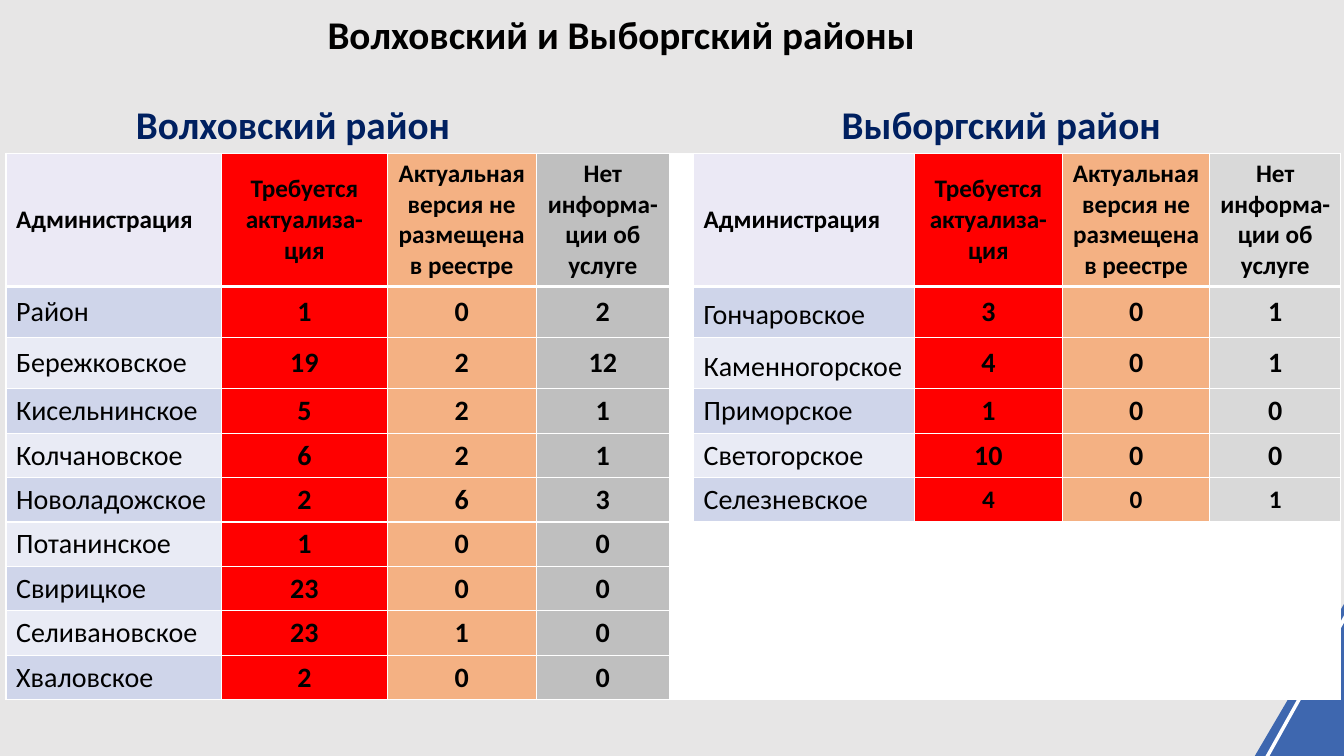
from lxml.etree import SubElement
from pptx import Presentation
from pptx.dml.color import RGBColor
from pptx.enum.text import MSO_ANCHOR, MSO_AUTO_SIZE, PP_ALIGN
from pptx.oxml.ns import qn
from pptx.util import Inches, Pt

FONT = "Calibri"
BLACK = RGBColor(0x00, 0x00, 0x00)
WHITE = RGBColor(0xFF, 0xFF, 0xFF)
NAVY = RGBColor(0x00, 0x20, 0x60)
BLUE = RGBColor(0x3E, 0x67, 0xAF)
BACKGROUND = RGBColor(0xE7, 0xE6, 0xE6)
LILAC = RGBColor(0xEB, 0xE9, 0xF5)
BANDS = (RGBColor(0xCF, 0xD5, 0xEA), RGBColor(0xE9, 0xEB, 0xF5))
RED = RGBColor(0xFF, 0x00, 0x00)
ORANGE = RGBColor(0xF4, 0xB1, 0x83)
GREY = RGBColor(0xBF, 0xBF, 0xBF)
LIGHT_GREY = RGBColor(0xD9, 0xD9, 0xD9)

HEADERS = ("Администрация", "Требуется актуализа-ция",
           "Актуальная версия не размещена в реестре",
           "Нет информа-ции об услуге")
VOLKHOV = (("Район", 1, 0, 2), ("Бережковское", 19, 2, 12),
           ("Кисельнинское", 5, 2, 1), ("Колчановское", 6, 2, 1),
           ("Новоладожское", 2, 6, 3), ("Потанинское", 1, 0, 0),
           ("Свирицкое", 23, 0, 0), ("Селивановское", 23, 1, 0),
           ("Хваловское", 2, 0, 0))
VYBORG = (("Гончаровское", 3, 0, 1), ("Каменногорское", 4, 0, 1),
          ("Приморское", 1, 0, 0), ("Светогорское", 10, 0, 0),
          ("Селезневское", 4, 0, 1))
COLUMN_WIDTHS = (2.14, 1.64, 1.48, 1.32, 0.24, 2.19, 1.47, 1.46, 1.3)
ROW_HEIGHTS = (1.3, 0.5, 0.5) + (0.43,) * 7
VYBORG_COLUMN = 5

CORNER = ((14.91, 3.3), (12.24, 7.85), (13, 8.88), (14.48, 4.84))
CORNER_STRIPE = ((12.36, 7.88), (14.8, 3.51), (13.14, 8.81))


def write(p, text, size, bold=True, color=BLACK):
    """Add one formatted run to a paragraph."""
    r = p.add_run()
    r.text = text
    for name, value in {"name": FONT, "size": Pt(size), "bold": bold}.items():
        setattr(r.font, name, value)
    r.font.color.rgb = color


def add_heading(s, text, left, top, width, color):
    """Add a bold 28 pt heading."""
    box = s.shapes.add_textbox(*map(Inches, (left, top, width, 0.57)))
    tf = box.text_frame
    for name, value in {"word_wrap": True,
                        "auto_size": MSO_AUTO_SIZE.SHAPE_TO_FIT_TEXT}.items():
        setattr(tf, name, value)
    write(tf.paragraphs[0], text, 28, color=color)


def add_outline(s, points):
    """Add a closed freeform through points given in inches."""
    start, *rest = [tuple(map(Inches, point)) for point in points]
    builder = s.shapes.build_freeform(*start)
    builder.add_line_segments(rest, close=True)
    sp = builder.convert_to_shape()
    sp.shadow.inherit = False
    return sp


def add_corner(s):
    """Draw the blue corner and its white stripe."""
    corner = add_outline(s, CORNER)
    corner.fill.solid()
    corner.fill.fore_color.rgb = BLUE
    corner.line.fill.background()
    stripe = add_outline(s, CORNER_STRIPE)
    stripe.fill.background()
    stripe.line.color.rgb = WHITE
    stripe.line.width = Pt(2.5)


def style_cell(cell, row):
    """Give a cell white borders, thick below the header, and a white fill."""
    tc_pr = cell._tc.get_or_add_tcPr()
    widths = {"a:lnL": 1, "a:lnR": 1, "a:lnT": 3 if row == 1 else 1,
              "a:lnB": 3 if row == 0 else 1}
    for tag, width in widths.items():
        line = SubElement(tc_pr, qn(tag), w=str(Pt(width)))
        fill = SubElement(line, qn("a:solidFill"))
        SubElement(fill, qn("a:srgbClr"), val=str(WHITE))
    cell.fill.solid()
    cell.fill.fore_color.rgb = WHITE
    cell.vertical_anchor = MSO_ANCHOR.MIDDLE


def fill_district(table, first_column, records, last_fill):
    """Write the header and records of one district."""
    for row, values in enumerate((HEADERS,) + records):
        name_fill = BANDS[(row - 1) % 2] if row else LILAC
        fills = (name_fill, RED, ORANGE, last_fill)
        for i, (value, fill) in enumerate(zip(values, fills)):
            cell = table.cell(row, first_column + i)
            cell.fill.fore_color.rgb = fill
            p = cell.text_frame.paragraphs[0]
            p.alignment = PP_ALIGN.CENTER if i else PP_ALIGN.LEFT
            in_vyborg = first_column == VYBORG_COLUMN
            if in_vyborg and i == 0 and row in (1, 2):
                p.line_spacing = 1.2
            small = row == 0 or (in_vyborg and i and row == len(records))
            write(p, str(value), 18 if small else 20, bold=row == 0 or i > 0)


def add_districts_table(s):
    """Add the table that holds both districts side by side."""
    frame = s.shapes.add_table(
        len(ROW_HEIGHTS), len(COLUMN_WIDTHS), Inches(0.06), Inches(1.52),
        Inches(sum(COLUMN_WIDTHS)), Inches(sum(ROW_HEIGHTS)))
    table = frame.table
    for column, width in zip(table.columns, COLUMN_WIDTHS):
        column.width = Inches(width)
    for i, (row, height) in enumerate(zip(table.rows, ROW_HEIGHTS)):
        row.height = Inches(height)
        for cell in row.cells:
            style_cell(cell, i)
    fill_district(table, 0, VOLKHOV, GREY)
    fill_district(table, VYBORG_COLUMN, VYBORG, LIGHT_GREY)


def main():
    """Build the slide and save it."""
    prs = Presentation()
    prs.slide_width, prs.slide_height = Inches(13.33), Inches(7.5)
    s = prs.slides.add_slide(prs.slide_layouts[6])
    s.background.fill.solid()
    s.background.fill.fore_color.rgb = BACKGROUND
    add_corner(s)
    add_districts_table(s)
    add_heading(s, "Волховский и Выборгский районы", 3.15, 0.05, 8.59, BLACK)
    add_heading(s, "Волховский район", 1.25, 0.95, 4.03, NAVY)
    add_heading(s, "Выборгский район", 8.25, 0.95, 4.03, NAVY)
    prs.save("out.pptx")


main()
